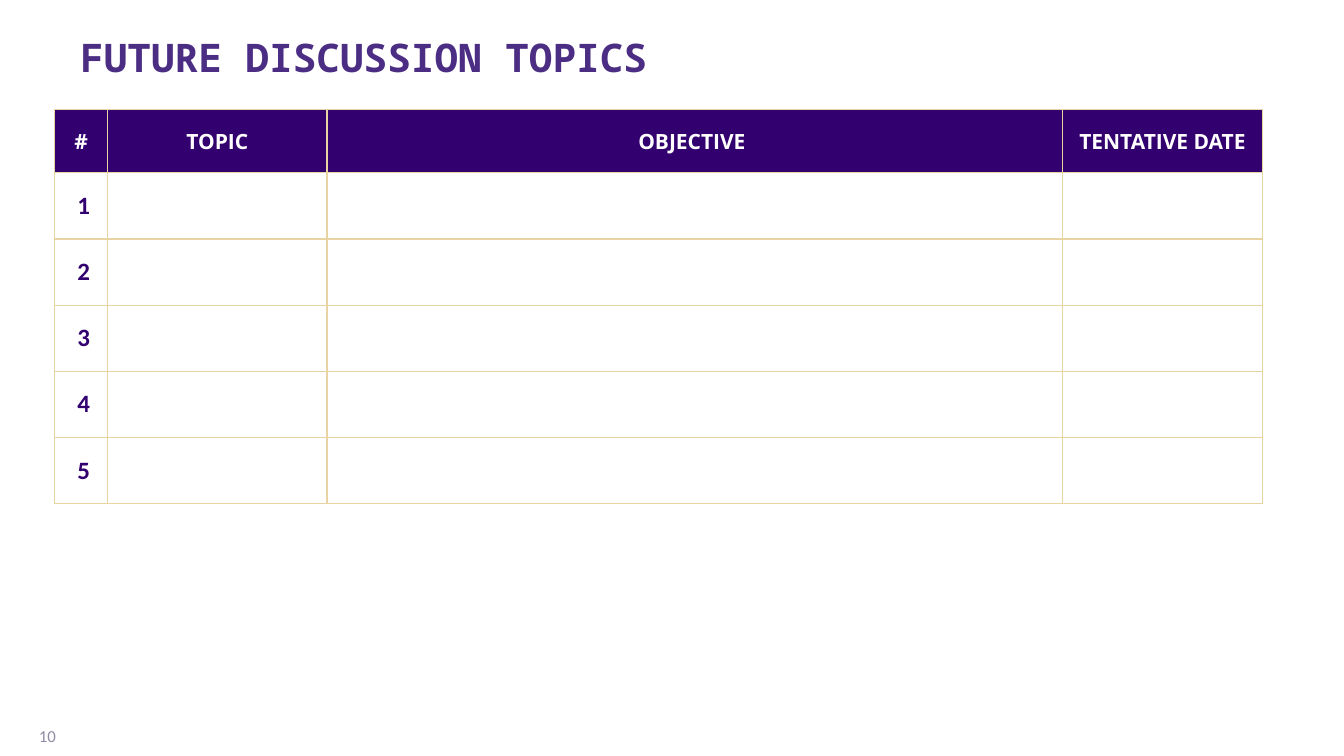
import pptx
import pptx.util
import pptx.dml.color
import pptx.enum.text
import pptx.oxml
import pptx.oxml.ns

# Content
TITLE = "FUTURE DISCUSSION TOPICS"
PAGE_NUMBER = "10"
HEADERS = ["#", "TOPIC", "OBJECTIVE\u00a0", "TENTATIVE DATE"]
TOPIC_COUNT = 5
ROWS = [HEADERS] + [[str(number), "", "", ""] for number in range(1, TOPIC_COUNT + 1)]

# Style
COLORS = {
    "title": "4B2E83",
    "header": "33006F",
    "header_text": "FFFFFF",
    "border": "E8D3A2",
    "page_number": "908CA4",
}
BORDER_WIDTH = 1

# Layout in inches
SLIDE_SIZE = (14.22, 8)
TITLE_BOX = (0.75, 0.36, 12.45, 0.52)
PAGE_NUMBER_BOX = (0.19, 7.57, 0.5, 0.43)
TABLE_ORIGIN = (0.58, 1.16)
COLUMN_WIDTHS = [0.56, 2.32, 7.78, 2.12]
ROW_HEIGHTS = [0.67] + [0.7] * TOPIC_COUNT

Inches = pptx.util.Inches
ALIGN = pptx.enum.text.PP_ALIGN
ANCHOR = pptx.enum.text.MSO_ANCHOR


def write_text(text_frame, text, font_name, size, color, bold=False, alignment=ALIGN.LEFT):
    text_frame.text = text
    paragraph = text_frame.paragraphs[0]
    paragraph.alignment = alignment
    font = paragraph.runs[0].font
    font.name = font_name
    font.size = pptx.util.Pt(size)
    font.bold = bold
    font.color.rgb = pptx.dml.color.RGBColor.from_string(color)
    return paragraph


def add_text_box(slide, box, anchor, *text_style, **text_options):
    text_frame = slide.shapes.add_textbox(*map(Inches, box)).text_frame
    text_frame.word_wrap = True
    text_frame.vertical_anchor = anchor
    return write_text(text_frame, *text_style, **text_options)


def add_borders(cell):
    properties = cell._tc.get_or_add_tcPr()
    for index, side in enumerate(("lnL", "lnR", "lnT", "lnB")):
        properties.insert(index, pptx.oxml.parse_xml(
            f'<a:{side} {pptx.oxml.ns.nsdecls("a")} w="{pptx.util.Pt(BORDER_WIDTH)}">'
            f'<a:solidFill><a:srgbClr val="{COLORS["border"]}"/></a:solidFill></a:{side}>'))


def fill_cell(cell, text, is_header):
    cell.margin_left = Inches(0 if is_header or not text else 0.05)
    cell.margin_right = cell.margin_top = cell.margin_bottom = 0
    cell.vertical_anchor = ANCHOR.MIDDLE
    if is_header:
        cell.fill.solid()
        cell.fill.fore_color.rgb = pptx.dml.color.RGBColor.from_string(COLORS["header"])
        text_style = ("Open Sans", 16, COLORS["header_text"])
    else:
        cell.fill.background()
        text_style = ("Calibri", 19, COLORS["header"])
    if text:
        write_text(cell.text_frame, text, *text_style, bold=True, alignment=ALIGN.CENTER)
    add_borders(cell)


def add_topic_table(slide):
    table = slide.shapes.add_table(
        len(ROWS), len(HEADERS), *map(Inches, TABLE_ORIGIN),
        Inches(sum(COLUMN_WIDTHS)), Inches(sum(ROW_HEIGHTS))).table
    table.horz_banding = False
    for column, width in zip(table.columns, COLUMN_WIDTHS):
        column.width = Inches(width)
    for row_index, (row, height, texts) in enumerate(zip(table.rows, ROW_HEIGHTS, ROWS)):
        row.height = Inches(height)
        for cell, text in zip(row.cells, texts):
            fill_cell(cell, text, is_header=row_index == 0)


def main():
    presentation = pptx.Presentation()
    presentation.slide_width, presentation.slide_height = map(Inches, SLIDE_SIZE)
    slide = presentation.slides.add_slide(presentation.slide_layouts[6])

    # Title
    title = add_text_box(slide, TITLE_BOX, ANCHOR.TOP, TITLE,
                         "Noto Sans Mono", 30, COLORS["title"], bold=True)
    title.line_spacing = 0.9

    # Page number
    add_text_box(slide, PAGE_NUMBER_BOX, ANCHOR.MIDDLE, PAGE_NUMBER,
                 "Calibri", 12.8, COLORS["page_number"], alignment=ALIGN.RIGHT)

    # Topics
    add_topic_table(slide)
    presentation.save("out.pptx")


if __name__ == "__main__":
    main()
